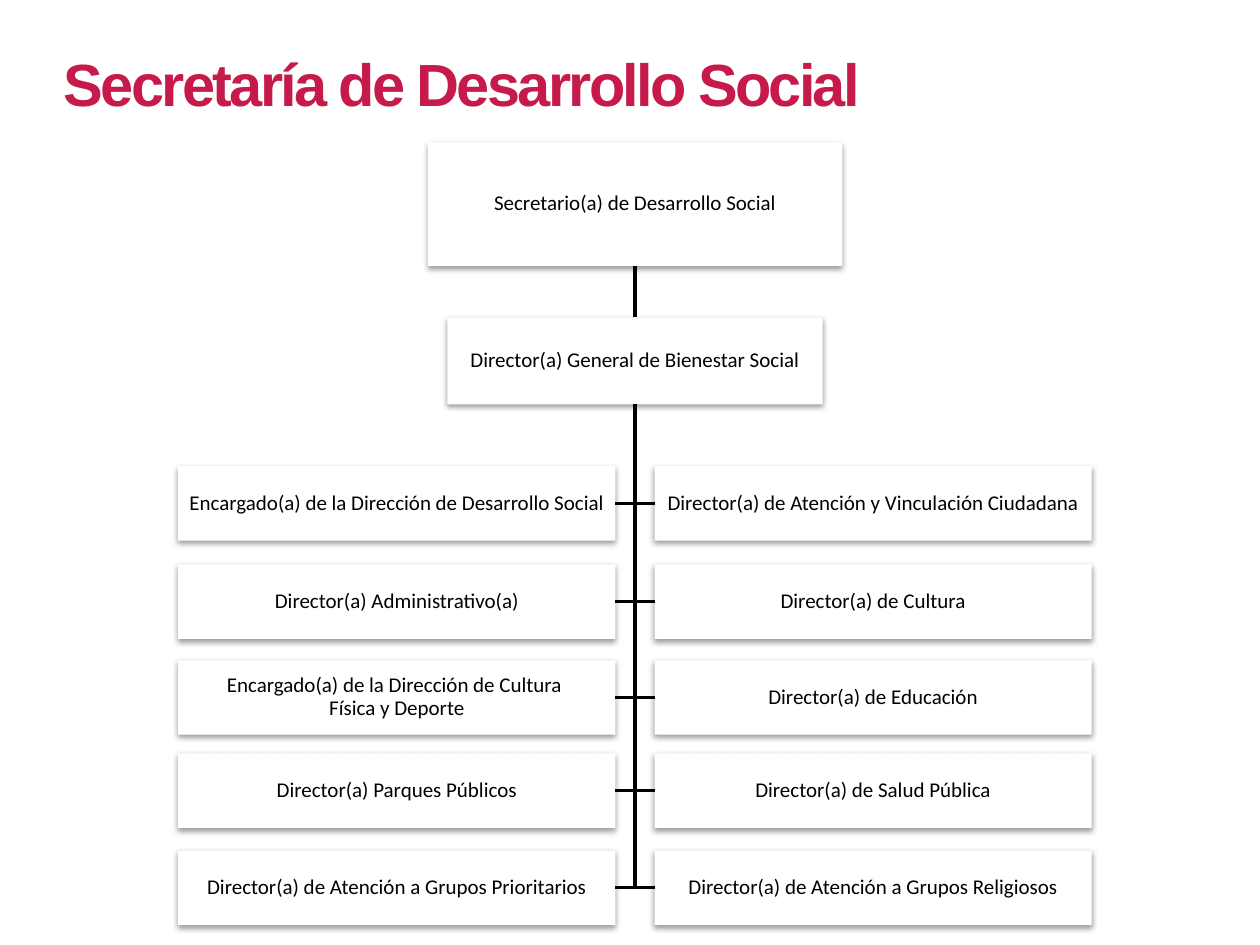
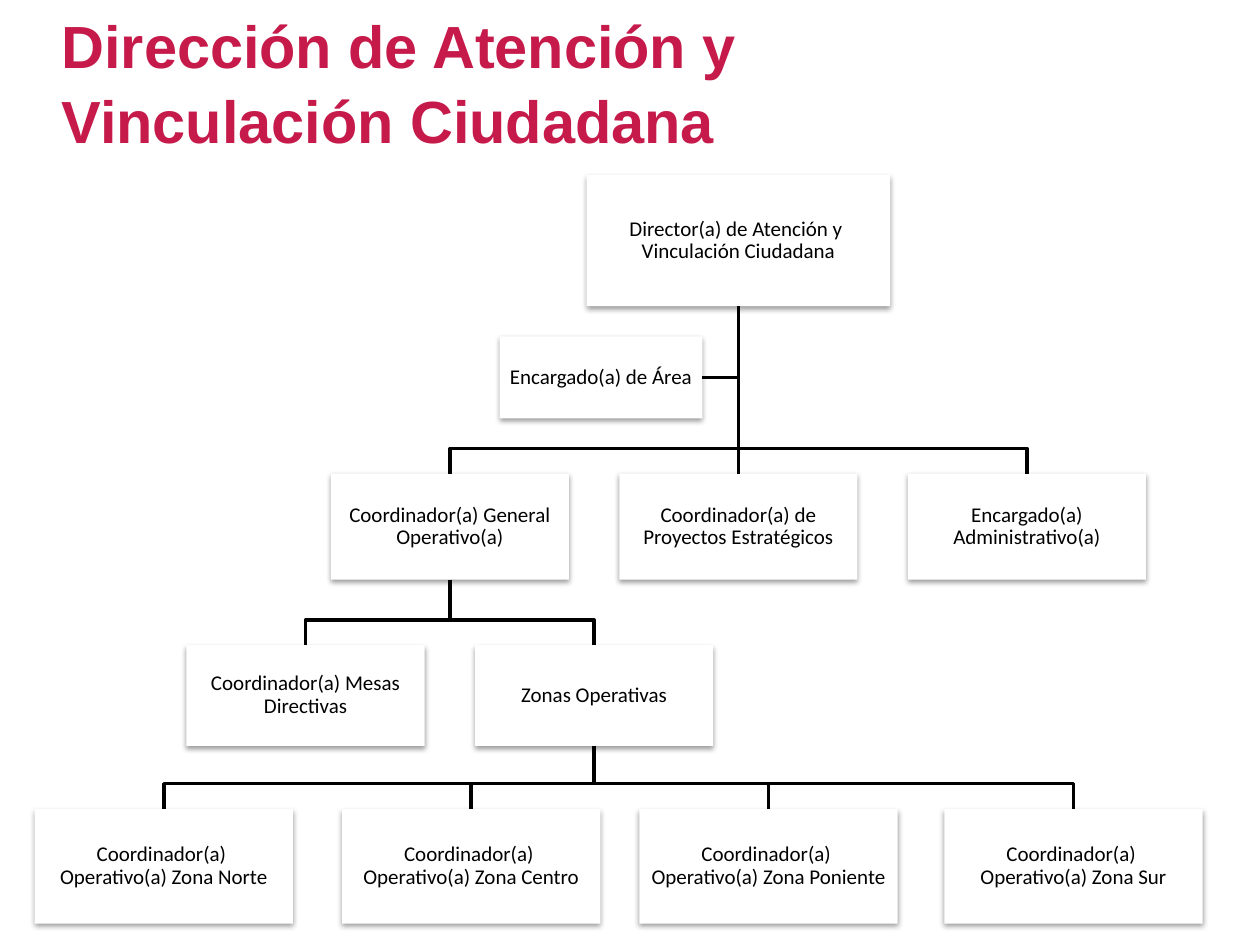
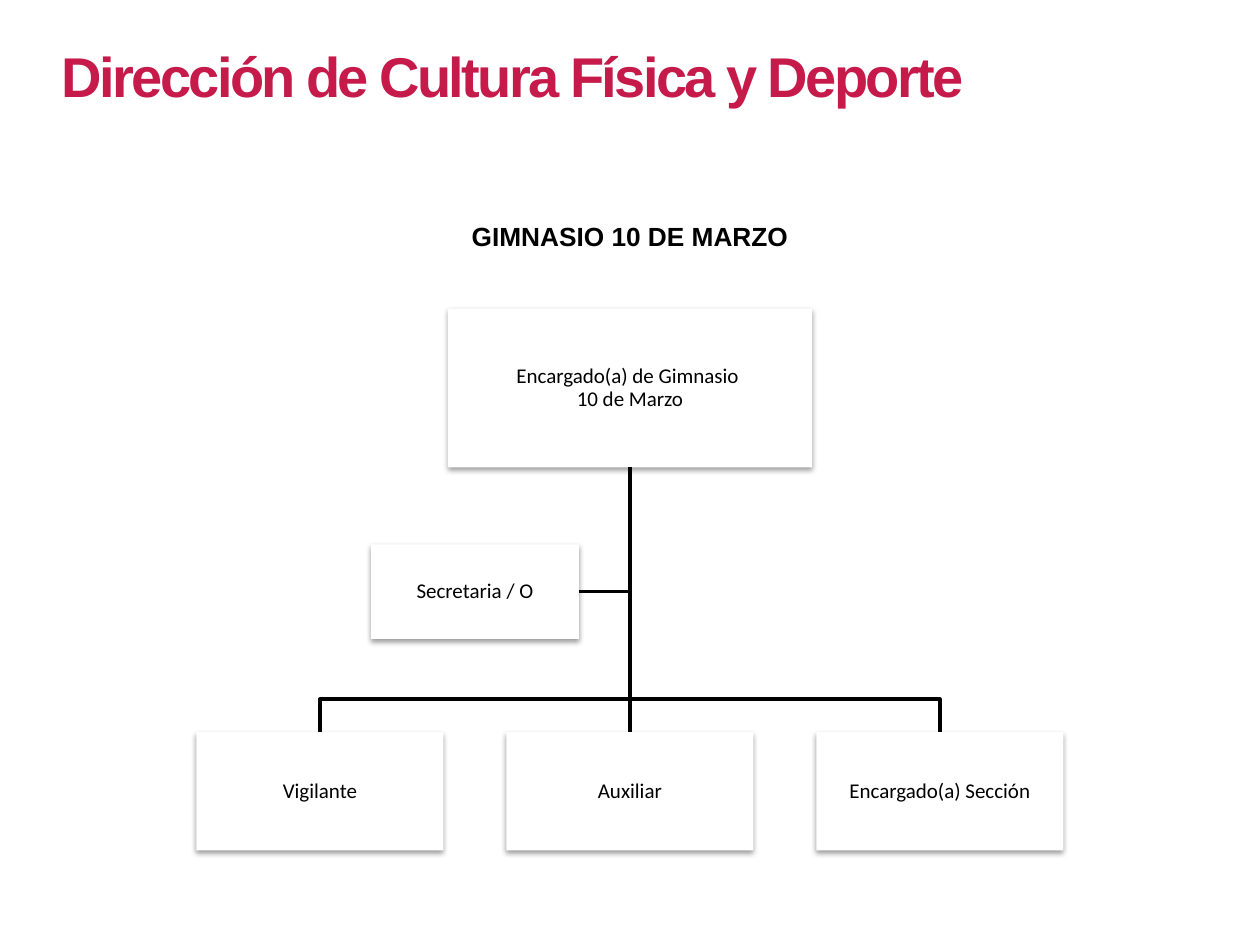
from dataclasses import dataclass

from lxml import etree
from pptx import Presentation
from pptx.dml.color import RGBColor
from pptx.enum.shapes import MSO_CONNECTOR, MSO_SHAPE
from pptx.enum.text import MSO_ANCHOR, PP_ALIGN
from pptx.oxml.ns import qn
from pptx.util import Inches, Pt

RECTANGLE = MSO_SHAPE.RECTANGLE
STRAIGHT = MSO_CONNECTOR.STRAIGHT
MIDDLE = MSO_ANCHOR.MIDDLE
CENTER = PP_ALIGN.CENTER
LEFT = PP_ALIGN.LEFT
TOP_SIDE, BOTTOM_SIDE = 0, 2


@dataclass(frozen=True)
class Theme:
    accent: RGBColor = RGBColor(0xC5, 0x1A, 0x4A)
    ink: RGBColor = RGBColor(0x00, 0x00, 0x00)
    paper: RGBColor = RGBColor(0xFF, 0xFF, 0xFF)
    heading_font: str = "Arial"
    box_font: str = "Calibri"
    title_size: int = 34
    small_title_size: int = 32
    subtitle_size: int = 15
    box_size: int = 12
    line_width: int = 2
    title_spacing: float = 1.05
    box_spacing: float = 0.9


class ChartDeck:
    """Draws organisation charts on the current slide in one style."""

    def __init__(self, theme):
        self.theme = theme
        self.deck = Presentation()
        self.deck.slide_width = Inches(10)
        self.deck.slide_height = Inches(7.5)
        self.page = None

    def new_page(self):
        self.page = self.deck.slides.add_slide(self.deck.slide_layouts[6])

    def add_text(self, frame, text, font, size, color, bold=False, align=LEFT, spacing=1.0, tracking=0):
        frame.vertical_anchor = MIDDLE
        para = frame.paragraphs[0]
        para.alignment = align
        para.line_spacing = spacing
        for index, line in enumerate(text.split("\n")):
            if index:
                para.add_line_break()
            span = para.add_run()
            span.text = line
            span.font.name = font
            span.font.size = Pt(size)
            span.font.bold = bold
            span.font.color.rgb = color
            if tracking:
                span.font._element.set("spc", str(round(tracking * 100)))

    def title(self, text, left, top, width, height, size, tracking=0):
        box = self.page.shapes.add_textbox(Inches(left), Inches(top), Inches(width), Inches(height))
        box.text_frame.word_wrap = True
        self.add_text(box.text_frame, text, self.theme.heading_font, size, self.theme.accent,
                      bold=True, spacing=self.theme.title_spacing, tracking=tracking)

    def subtitle(self, text, left, top, width, height):
        box = self.page.shapes.add_textbox(Inches(left), Inches(top), Inches(width), Inches(height))
        box.text_frame.word_wrap = False
        self.add_text(box.text_frame, text, self.theme.heading_font, self.theme.subtitle_size,
                      self.theme.ink, bold=True, align=CENTER)

    def post(self, text, center, top, width, height):
        box = self.page.shapes.add_shape(
            RECTANGLE, Inches(center - width / 2), Inches(top), Inches(width), Inches(height))
        box.fill.solid()
        box.fill.fore_color.rgb = self.theme.paper
        box.line.fill.background()
        self.soft_shadow(box)
        frame = box.text_frame
        frame.word_wrap = True
        frame.margin_left = frame.margin_right = Inches(0.01)
        frame.margin_top = frame.margin_bottom = Inches(0.01)
        self.add_text(frame, text, self.theme.box_font, self.theme.box_size, self.theme.ink,
                      align=CENTER, spacing=self.theme.box_spacing)
        return box

    def soft_shadow(self, box):
        box.shadow.inherit = False
        effects = box._element.spPr.find(qn("a:effectLst"))
        shadow = etree.SubElement(effects, qn("a:outerShdw"), blurRad="40000", dist="20000",
                                  dir="5400000", rotWithShape="0")
        color = etree.SubElement(shadow, qn("a:srgbClr"), val=str(self.theme.ink))
        etree.SubElement(color, qn("a:alpha"), val="38000")

    def style_line(self, line):
        line.color.rgb = self.theme.ink
        line.width = Pt(self.theme.line_width)

    def straight_link(self, parent, child):
        link = self.page.shapes.add_connector(STRAIGHT, 0, 0, 0, 0)
        link.begin_connect(parent, BOTTOM_SIDE)
        link.end_connect(child, TOP_SIDE)
        self.style_line(link.line)
        etree.SubElement(link._element.spPr, qn("a:effectLst"))

    def bent_link(self, points):
        builder = self.page.shapes.build_freeform(*points[0], scale=1.0)
        builder.add_line_segments(points[1:], close=False)
        link = builder.convert_to_shape()
        link.fill.background()
        link.shadow.inherit = False
        self.style_line(link.line)

    def side_link(self, parent, box):
        trunk = parent.left + parent.width // 2
        middle = box.top + box.height // 2
        edge = box.left if box.left > trunk else box.left + box.width
        self.bent_link([(trunk, parent.top + parent.height), (trunk, middle), (edge, middle)])

    def branch(self, parent, children, drop=0.2):
        trunk = parent.left + parent.width // 2
        for child in children:
            center = child.left + child.width // 2
            if abs(center - trunk) < Inches(0.01):
                self.straight_link(parent, child)
                continue
            bus = child.top - Inches(drop)
            self.bent_link([(trunk, parent.top + parent.height), (trunk, bus),
                            (center, bus), (center, child.top)])

    def row(self, posts, top, width, height):
        return [self.post(text, center, top, width, height) for text, center in posts]


def social_development(chart):
    chart.new_page()
    chart.title("Secretaría de Desarrollo Social", 0.41, 0.18, 9, 0.92,
                chart.theme.title_size, tracking=-1.5)
    axis, offset = 5.04, 1.89
    secretary = chart.post("Secretario(a) de Desarrollo Social", axis, 1.13, 3.29, 0.98)
    director = chart.post("Director(a) General de Bienestar Social", axis, 2.52, 2.98, 0.69)
    chart.branch(secretary, [director])
    areas = [
        (3.7, "Encargado(a) de la Dirección de Desarrollo Social",
         "Director(a) de Atención y Vinculación Ciudadana"),
        (4.48, "Director(a) Administrativo(a)", "Director(a) de Cultura"),
        (5.24, "Encargado(a) de la Dirección de Cultura \nFísica y Deporte",
         "Director(a) de Educación"),
        (5.98, "Director(a) Parques Públicos", "Director(a) de Salud Pública"),
        (6.75, "Director(a) de Atención a Grupos Prioritarios",
         "Director(a) de Atención a Grupos Religiosos"),
    ]
    for top, left_text, right_text in areas:
        pair = [(left_text, axis - offset), (right_text, axis + offset)]
        for box in chart.row(pair, top, 3.47, 0.59):
            chart.side_link(director, box)


def citizen_attention(chart):
    chart.new_page()
    chart.title("Dirección de Atención y Vinculación Ciudadana", 0.39, 0.01, 6.4, 1.25,
                chart.theme.title_size)
    axis, pitch = 5.86, 2.29
    director = chart.post("Director(a) de Atención y \nVinculación Ciudadana", axis, 1.39, 2.41, 1.04)
    area_lead = chart.post("Encargado(a) de Área", 4.77, 2.67, 1.61, 0.65)
    coordinators = chart.row([
        ("Coordinador(a) General Operativo(a)", axis - pitch),
        ("Coordinador(a) de Proyectos Estratégicos", axis),
        ("Encargado(a)\nAdministrativo(a)", axis + pitch),
    ], 3.76, 1.89, 0.84)
    operations = chart.row([
        ("Coordinador(a) Mesas Directivas", axis - 1.5 * pitch),
        ("Zonas Operativas", axis - 0.5 * pitch),
    ], 5.12, 1.89, 0.8)
    zones = chart.row([
        (f"Coordinador(a) \nOperativo(a) Zona {zone}", center)
        for zone, center in [("Norte", 1.3), ("Centro", 3.74), ("Poniente", 6.1), ("Sur", 8.52)]
    ], 6.42, 2.05, 0.91)
    chart.side_link(director, area_lead)
    chart.branch(director, coordinators)
    chart.branch(coordinators[0], operations)
    chart.branch(operations[1], zones)


def sports(chart):
    chart.new_page()
    chart.title("Dirección de Cultura Física y Deporte", 0.39, 0.26, 7.69, 0.64,
                chart.theme.small_title_size, tracking=-1.5)
    chart.subtitle("GIMNASIO 10 DE MARZO", 3.63, 1.7, 2.74, 0.35)
    axis, pitch = 5, 2.46
    manager = chart.post("Encargado(a) de Gimnasio \n10 de Marzo", axis, 2.45, 2.89, 1.26)
    secretary = chart.post("Secretaria / O", 3.77, 4.32, 1.65, 0.75)
    staff = chart.row([
        ("Vigilante", axis - pitch),
        ("Auxiliar", axis),
        ("Encargado(a) Sección", axis + pitch),
    ], 5.81, 1.96, 0.94)
    chart.side_link(manager, secretary)
    chart.branch(manager, staff, drop=0.26)


def main():
    chart = ChartDeck(Theme())
    social_development(chart)
    citizen_attention(chart)
    sports(chart)
    chart.deck.save("out.pptx")


if __name__ == "__main__":
    main()
